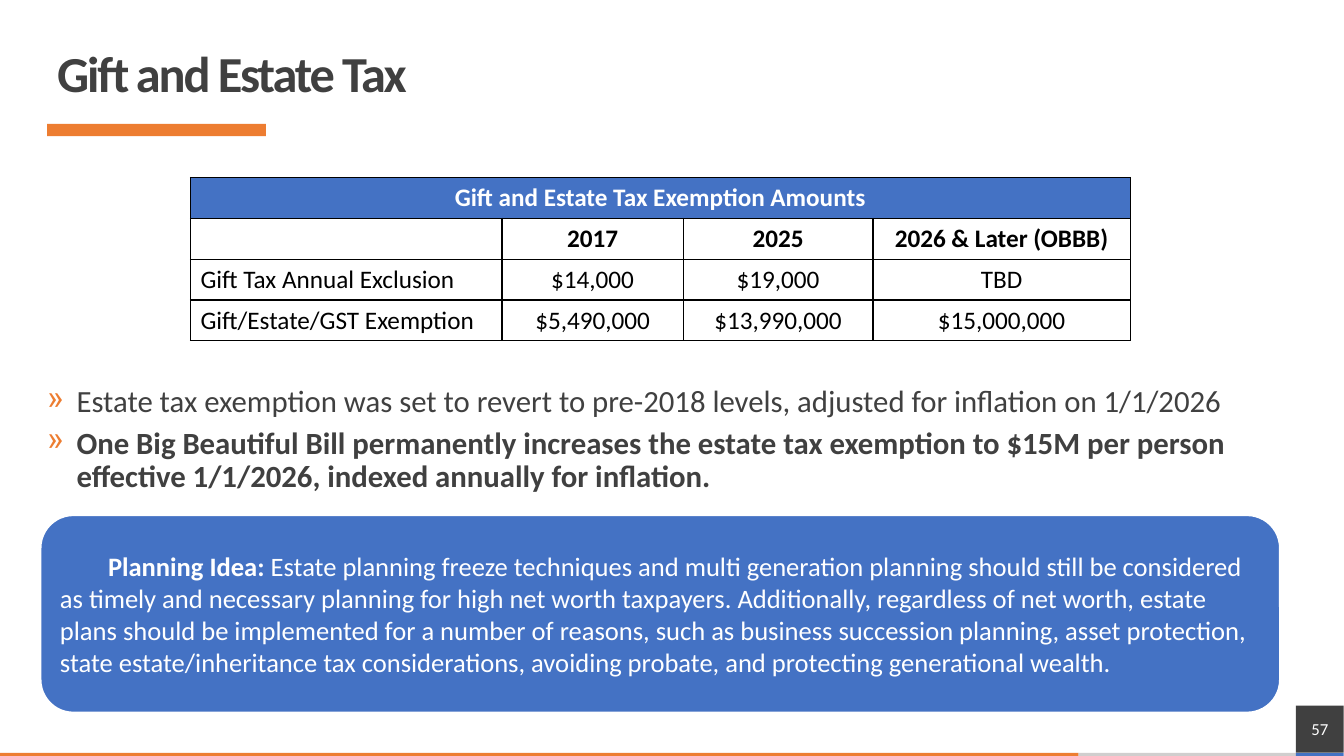
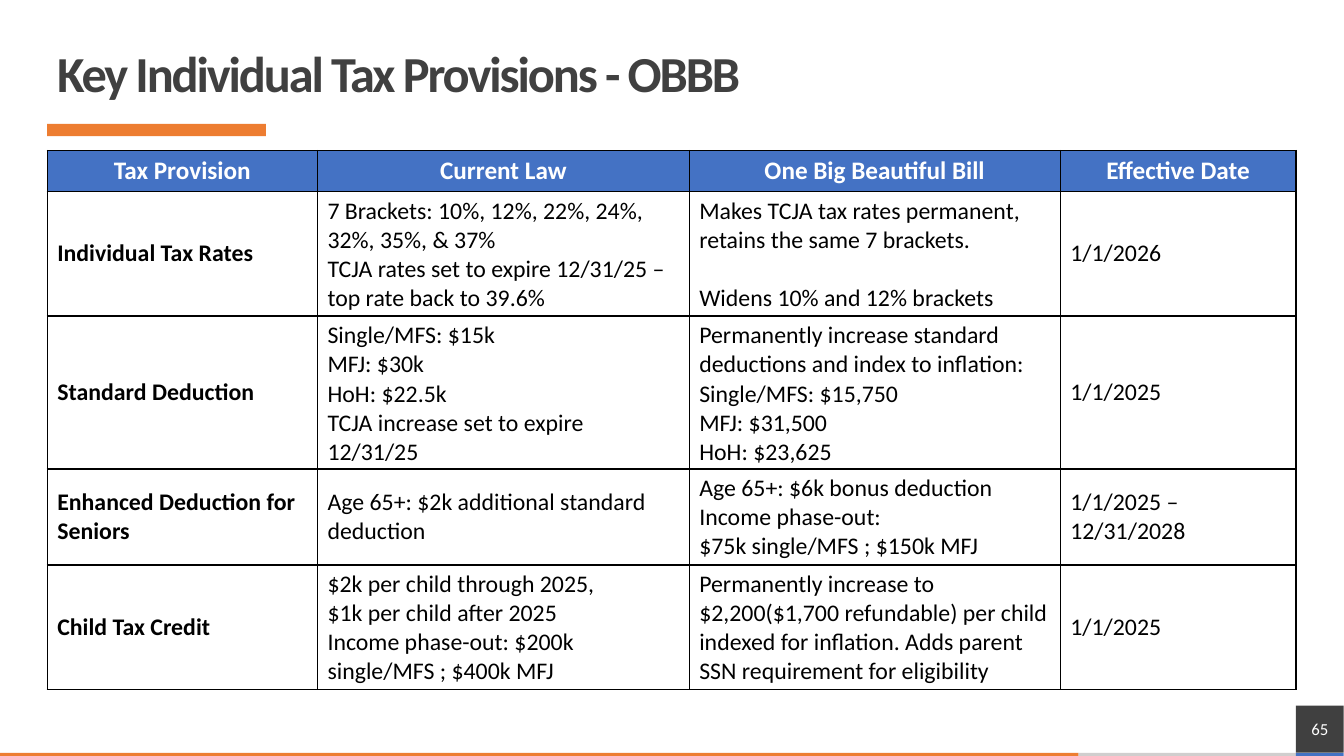
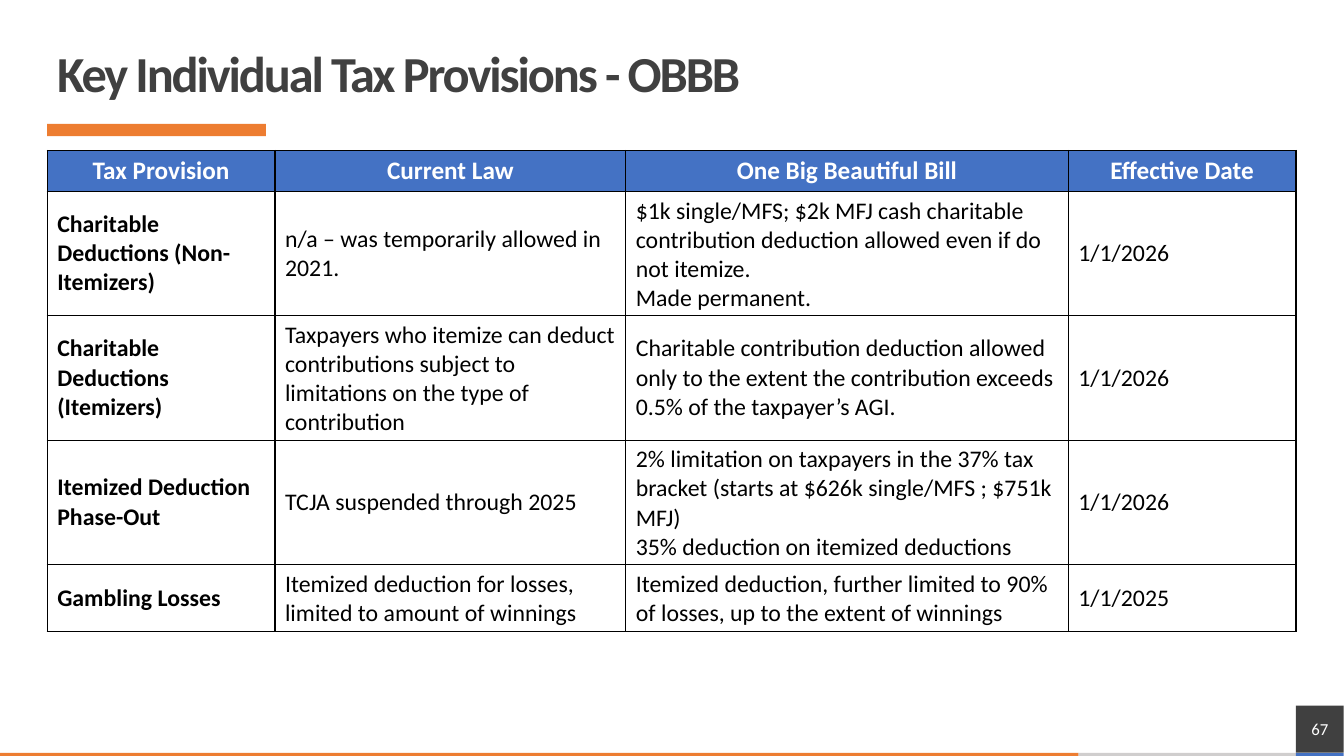
from lxml import etree
from pptx import Presentation
from pptx.dml.color import RGBColor
from pptx.enum.shapes import MSO_SHAPE as Shape
from pptx.enum.text import MSO_ANCHOR as Anchor, PP_ALIGN as Align
from pptx.oxml import parse_xml
from pptx.oxml.ns import nsdecls, qn
from pptx.util import Cm, Pt

ORANGE, BLUE, GREY = "ED7D31", "4472C4", "D0CECE"
DARK, WHITE, BLACK = "404040", "FFFFFF", "000000"
hex_color = RGBColor.from_string

MARGIN = 1.19
CONTENT_WIDTH = 31.47
HEADINGS = ["Tax Provision", "Current Law", "One Big Beautiful Bill", "Effective Date"]


def write(paragraph, text, size, color, bold=False):
    run = paragraph.add_run()
    run.text = text
    run.font.name = "Calibri"
    run.font.size = Pt(size)
    run.font.bold = bold
    run.font.color.rgb = hex_color(color)
    return run


def add_grid(slide, left, top, widths, rows, compact=False):
    """Add a black-ruled table; compact centres the figures and bolds the second row."""
    row_height = Cm(1.03)
    grid = slide.shapes.add_table(len(rows), len(widths), Cm(left), Cm(top),
                                  Cm(sum(widths)), row_height * len(rows)).table
    grid.first_row = grid.horz_banding = False
    for column, width in zip(grid.columns, widths):
        column.width = Cm(width)
    for r, row in enumerate(rows):
        grid.rows[r].height = row_height
        for c, content in enumerate(row):
            cell = grid.cell(r, c)
            header = r == 0
            bold = header or (r == 1 if compact else c == 0)
            for side in ("lnL", "lnR", "lnT", "lnB"):
                cell._tc.get_or_add_tcPr().append(parse_xml(
                    f'<a:{side} {nsdecls("a")} w="12700"><a:solidFill>'
                    f'<a:srgbClr val="{BLACK}"/></a:solidFill></a:{side}>'))
            if header:
                cell.fill.solid()
                cell.fill.fore_color.rgb = hex_color(BLUE)
            else:
                cell.fill.background()
            if not (header or compact):
                cell.vertical_anchor = Anchor.MIDDLE
            if not content:
                continue
            for i, line in enumerate(content.split("\n")):
                frame = cell.text_frame
                paragraph = frame.add_paragraph() if i else frame.paragraphs[0]
                if header or (compact and c > 0):
                    paragraph.alignment = Align.CENTER
                write(paragraph, line, 18 if header or compact else 17,
                      WHITE if header else BLACK, bold)
    return grid


deck = Presentation()
deck.slide_width, deck.slide_height = Cm(33.87), Cm(19.05)

# Shared frame: bottom strip, page number, title and its accent bar
bands = [
    (27.18, 18.97, 5.48, 0.15, GREY),
    (0, 18.97, 27.18, 0.15, ORANGE),
    (32.66, 18.97, 1.2, 0.15, BLUE),
    (MARGIN, 3.12, 5.51, 0.31, ORANGE),
    (32.66, 17.78, 1.2, 1.19, DARK),
]
pages = [
    ("57", "Gift and Estate Tax"),
    ("65", "Key Individual Tax Provisions - OBBB"),
    ("67", "Key Individual Tax Provisions - OBBB"),
]
for number, heading in pages:
    slide = deck.slides.add_slide(deck.slide_layouts[6])
    for left, top, width, height, color in bands:
        band = slide.shapes.add_shape(Shape.RECTANGLE, Cm(left), Cm(top), Cm(width), Cm(height))
        band.shadow.inherit = False
        band.fill.solid()
        band.fill.fore_color.rgb = hex_color(color)
        band.line.fill.background()
    page_frame = band.text_frame
    page_frame.margin_left = page_frame.margin_right = 0
    page_frame.margin_top = page_frame.margin_bottom = 0
    page_frame.vertical_anchor = Anchor.MIDDLE
    page_frame.paragraphs[0].alignment = Align.CENTER
    page_frame.paragraphs[0].space_after = Pt(6)
    write(page_frame.paragraphs[0], number, 12, WHITE)

    title = slide.shapes.add_textbox(Cm(MARGIN), Cm(1.02), Cm(30.33), Cm(1.78)).text_frame
    title.word_wrap = True
    title.vertical_anchor = Anchor.MIDDLE
    title.paragraphs[0].line_spacing = 0.9
    title_run = write(title.paragraphs[0], heading, 36, DARK, True)
    title_run._r.get_or_add_rPr().set("spc", "-150")

estate_slide, rates_slide, charity_slide = deck.slides

# Gift and estate tax
exemptions = add_grid(estate_slide, 4.8, 4.47, [7.85, 4.57, 4.78, 6.48], [
    ["Gift and Estate Tax Exemption Amounts", "", "", ""],
    ["", "2017", "2025", "2026 & Later (OBBB)"],
    ["Gift Tax Annual Exclusion", "$14,000", "$19,000", "TBD"],
    ["Gift/Estate/GST Exemption", "$5,490,000", "$13,990,000", "$15,000,000"],
], compact=True)
exemptions.cell(0, 0).merge(exemptions.cell(0, 3))

points = estate_slide.shapes.add_textbox(
    Cm(MARGIN), Cm(9.73), Cm(CONTENT_WIDTH), Cm(2.9)).text_frame
points.word_wrap = True
points.margin_left = points.margin_right = points.margin_top = points.margin_bottom = 0
for i, (point, bold) in enumerate([
    ("Estate tax exemption was set to revert to pre-2018 levels, "
     "adjusted for inflation on 1/1/2026", False),
    ("One Big Beautiful Bill permanently increases the estate tax exemption to $15M "
     "per person effective 1/1/2026, indexed annually for inflation.", True),
]):
    paragraph = points.add_paragraph() if i else points.paragraphs[0]
    properties = paragraph._p.get_or_add_pPr()
    properties.set("marL", str(Cm(0.74)))
    properties.set("indent", str(-Cm(0.74)))
    bullet_color = etree.SubElement(properties, qn("a:buClr"))
    etree.SubElement(bullet_color, qn("a:srgbClr"), val=ORANGE)
    etree.SubElement(properties, qn("a:buChar"), char="»")
    paragraph.line_spacing = 0.9
    if i:
        paragraph.space_before = Pt(6)
    write(paragraph, point, 22, DARK, bold)

callout = estate_slide.shapes.add_shape(
    Shape.ROUNDED_RECTANGLE, Cm(1.02), Cm(12.98), Cm(31.24), Cm(4.98))
callout.shadow.inherit = False
callout.fill.solid()
callout.fill.fore_color.rgb = hex_color(BLUE)
callout.line.color.rgb = hex_color(WHITE)
callout.line.width = Pt(1.5)
callout.text_frame.vertical_anchor = Anchor.MIDDLE
idea = callout.text_frame.paragraphs[0]
idea.alignment = Align.LEFT
idea._p.get_or_add_pPr().set("indent", str(Cm(1.21)))
write(idea, "Planning Idea: ", 19, WHITE, True)
write(idea, "Estate planning freeze techniques and multi generation planning should still be "
      "considered as timely and necessary planning for high net worth taxpayers. "
      "Additionally, regardless of net worth, estate plans should be implemented for a "
      "number of reasons, such as business succession planning, asset protection, state "
      "estate/inheritance tax considerations, avoiding probate, and protecting "
      "generational wealth.", 19, WHITE)

# Rates, deductions and credits
rates = add_grid(rates_slide, MARGIN, 3.79, [6.81, 9.37, 9.35, 5.94], [
    HEADINGS,
    ["Individual Tax Rates",
     "7 Brackets: 10%, 12%, 22%, 24%, 32%, 35%, & 37%\n"
     "TCJA rates set to expire 12/31/25 –top rate back to 39.6%",
     "Makes TCJA tax rates permanent, retains the same 7 brackets.\n"
     "Widens 10% and 12% brackets",
     "1/1/2026"],
    ["Standard Deduction",
     "Single/MFS: $15k\nMFJ: $30k\nHoH: $22.5k\nTCJA increase set to expire 12/31/25",
     "Permanently increase standard deductions and index to inflation:\n"
     "Single/MFS: $15,750\nMFJ: $31,500\nHoH: $23,625",
     "1/1/2025"],
    ["Enhanced Deduction for Seniors",
     "Age 65+: $2k additional standard deduction",
     "Age 65+: $6k bonus deduction\nIncome phase-out:\n$75k single/MFS ; $150k MFJ",
     "1/1/2025 – 12/31/2028"],
    ["Child Tax Credit",
     "$2k per child through 2025,\n$1k per child after 2025\n"
     "Income phase-out: $200k single/MFS ; $400k MFJ",
     "Permanently increase to $2,200($1,700 refundable) per child indexed for inflation. "
     "Adds parent SSN requirement for eligibility",
     "1/1/2025"],
])
rates.cell(1, 2).text_frame.paragraphs[1].space_before = Pt(20.7)

# Charitable and itemized deductions
add_grid(charity_slide, MARGIN, 3.79, [5.74, 8.84, 11.15, 5.74], [
    HEADINGS,
    ["Charitable Deductions (Non-Itemizers)",
     "n/a – was temporarily allowed in 2021.",
     "$1k single/MFS; $2k MFJ cash charitable contribution deduction allowed even if do "
     "not itemize.\nMade permanent.",
     "1/1/2026"],
    ["Charitable Deductions (Itemizers)",
     "Taxpayers who itemize can deduct contributions subject to limitations on the type "
     "of contribution",
     "Charitable contribution deduction allowed only to the extent the contribution "
     "exceeds 0.5% of the taxpayer’s AGI.",
     "1/1/2026"],
    ["Itemized Deduction Phase-Out",
     "TCJA suspended through 2025",
     "2% limitation on taxpayers in the 37% tax bracket (starts at $626k single/MFS ; "
     "$751k MFJ)\n35% deduction on itemized deductions",
     "1/1/2026"],
    ["Gambling Losses",
     "Itemized deduction for losses, limited to amount of winnings",
     "Itemized deduction, further limited to 90% of losses, up to the extent of winnings",
     "1/1/2025"],
])

deck.save("out.pptx")
